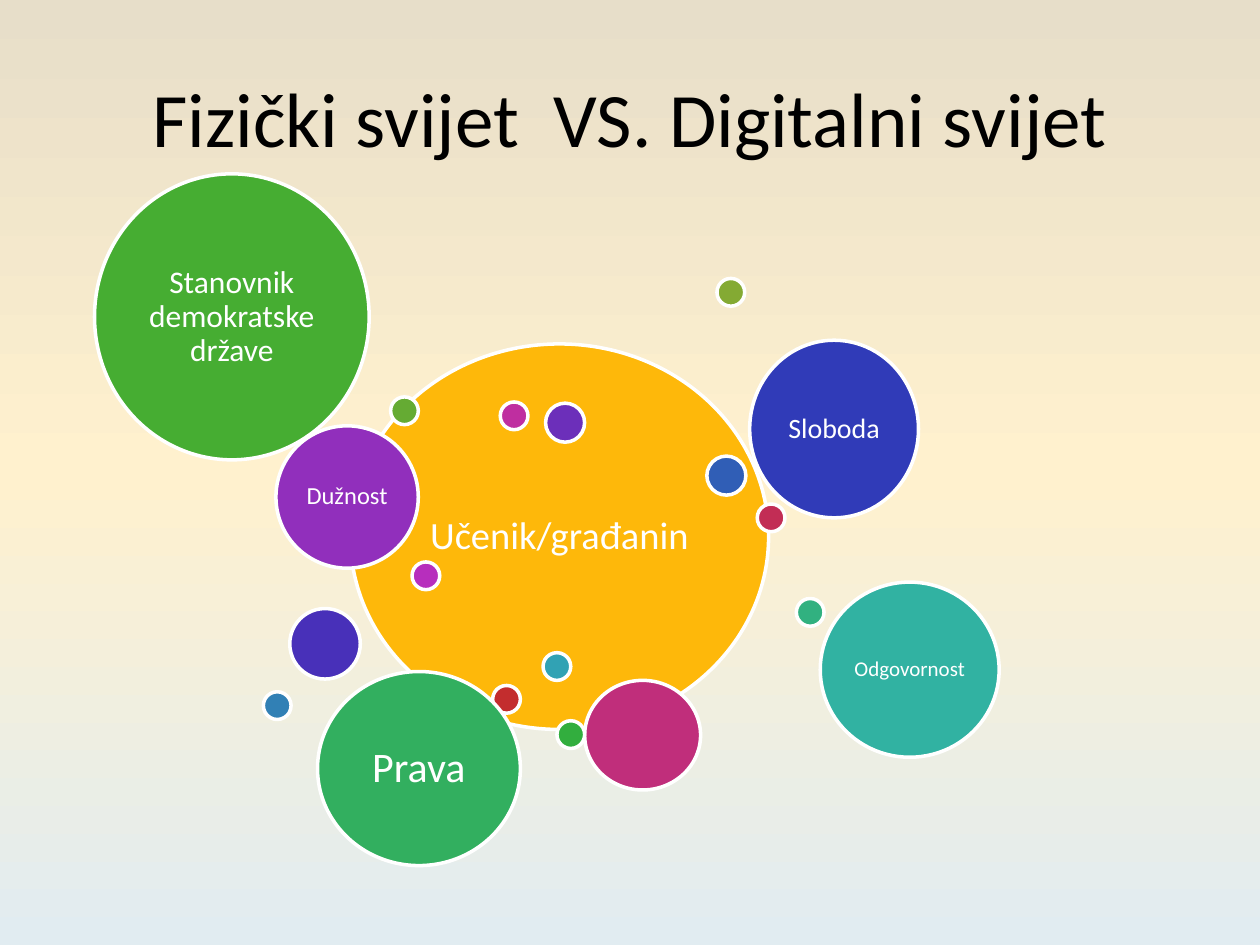
import copy
from dataclasses import dataclass

import pptx
import pptx.dml.color
import pptx.enum.shapes
import pptx.enum.text
import pptx.oxml.ns
import pptx.util

EMU_PER_PX = 9144


@dataclass(frozen=True)
class Theme:
    """Colours, font and type sizes of the slide."""
    font: str = "Calibri"
    title_size: int = 44
    title_color: str = "000000"
    bubble_text: str = "FFFFFF"
    outline: str = "FFFFFF"
    outline_width: int = 2
    background: tuple = ((0, "E7DEC9"), (0.5, "FFF1CE"), (1, "E1ECF1"))


THEME = Theme()
DOT = 22
MEDIUM_DOT = 31

# left, top, width, height, fill, label, type size, inset
BUBBLES = [
    (203, 135, 332, 306, "FEB80A", "Učenik/građanin", 22, 9),
    (316, 406, DOT, DOT, "C32D2E"),
    (526, 262, DOT, DOT, "C22D55"),
    (389, 402, 92, 87, "C02E7B"),
    (322, 181, DOT, DOT, "BF2EA0"),
    (252, 308, DOT, DOT, "B72EBD"),
    (144, 200, 113, 113, "912FBC", "Dužnost", 14, 6),
    (358, 182, MEDIUM_DOT, MEDIUM_DOT, "6C2FBA"),
    (155, 345, 56, 56, "4830B9"),
    (520, 132, 134, 141, "303BB8", "Sloboda", 16, 7),
    (486, 224, MEDIUM_DOT, MEDIUM_DOT, "305EB6"),
    (134, 411, DOT, DOT, "3180B5"),
    (356, 380, DOT, DOT, "31A2B4"),
    (576, 324, 142, 139, "31B2A2", "Odgovornost", 12, 5),
    (557, 337, DOT, DOT, "31B180"),
    (177, 395, 161, 154, "32AF5F", "Prava", 24, 10),
    (367, 434, DOT, DOT, "32AE3E"),
    (0, 0, 218, 227, "46AD32", "Stanovnik demokratske države", 18, 7),
    (235, 177, DOT, DOT, "65AB33"),
    (494, 83, DOT, DOT, "84AA33"),
]


def px(length):
    """Turn px into EMU."""
    return pptx.util.Emu(length * EMU_PER_PX)


def rgb(color):
    """Turn a hex string into a colour."""
    return pptx.dml.color.RGBColor.from_string(color)


def write_text(text_frame, text, size, color):
    """Write one centred run, anchored in the middle."""
    text_frame.word_wrap = True
    text_frame.vertical_anchor = pptx.enum.text.MSO_ANCHOR.MIDDLE
    paragraph = text_frame.paragraphs[0]
    paragraph.alignment = pptx.enum.text.PP_ALIGN.CENTER
    run = paragraph.add_run()
    run.text = text
    run.font.name = THEME.font
    run.font.size = pptx.util.Pt(size)
    run.font.color.rgb = rgb(color)
    return paragraph


def paint_background(slide):
    """Fill the background with a gradient from top to bottom."""
    fill = slide.background.fill
    fill.gradient()
    fill.gradient_angle = 270
    stop_list = slide.element.find(".//" + pptx.oxml.ns.qn("a:gsLst"))
    stop_list.append(copy.deepcopy(stop_list[-1]))
    for stop, (position, color) in zip(fill.gradient_stops, THEME.background):
        stop.position = position
        stop.color.rgb = rgb(color)


def place_title(slide, box, text):
    """Place the title placeholder in the box."""
    title = slide.shapes.title
    title.left, title.top, title.width, title.height = map(px, box)
    write_text(title.text_frame, text, THEME.title_size, THEME.title_color)


def add_bubble(shapes, box, fill, label=None, size=None, inset=0):
    """Add one outlined ellipse, with a label if given."""
    bubble = shapes.add_shape(pptx.enum.shapes.MSO_SHAPE.OVAL, *map(px, box))
    bubble.shadow.inherit = False
    bubble.fill.solid()
    bubble.fill.fore_color.rgb = rgb(fill)
    bubble.line.color.rgb = rgb(THEME.outline)
    bubble.line.width = pptx.util.Pt(THEME.outline_width)
    if label:
        frame = bubble.text_frame
        frame.margin_left = frame.margin_right = px(inset)
        frame.margin_top = frame.margin_bottom = px(inset)
        paragraph = write_text(frame, label, size, THEME.bubble_text)
        paragraph.line_spacing = 0.9


def place_bubbles(slide, box, bubbles):
    """Place the bubbles as one group from the corner of the box."""
    left, top = box[:2]
    group = slide.shapes.add_group_shape()
    for x, y, width, height, *style in bubbles:
        add_bubble(group.shapes, (left + x, top + y, width, height), *style)


def main():
    """Build and save the presentation."""
    presentation = pptx.Presentation()
    presentation.slide_width, presentation.slide_height = px(1000), px(750)
    slide = presentation.slides.add_slide(presentation.slide_layouts[5])
    paint_background(slide)
    place_title(slide, (50, 30, 900, 125), "Fizički svijet  VS. Digitalni svijet")
    place_bubbles(slide, (75, 138, 718, 549), BUBBLES)
    presentation.save("out.pptx")


if __name__ == "__main__":
    main()
